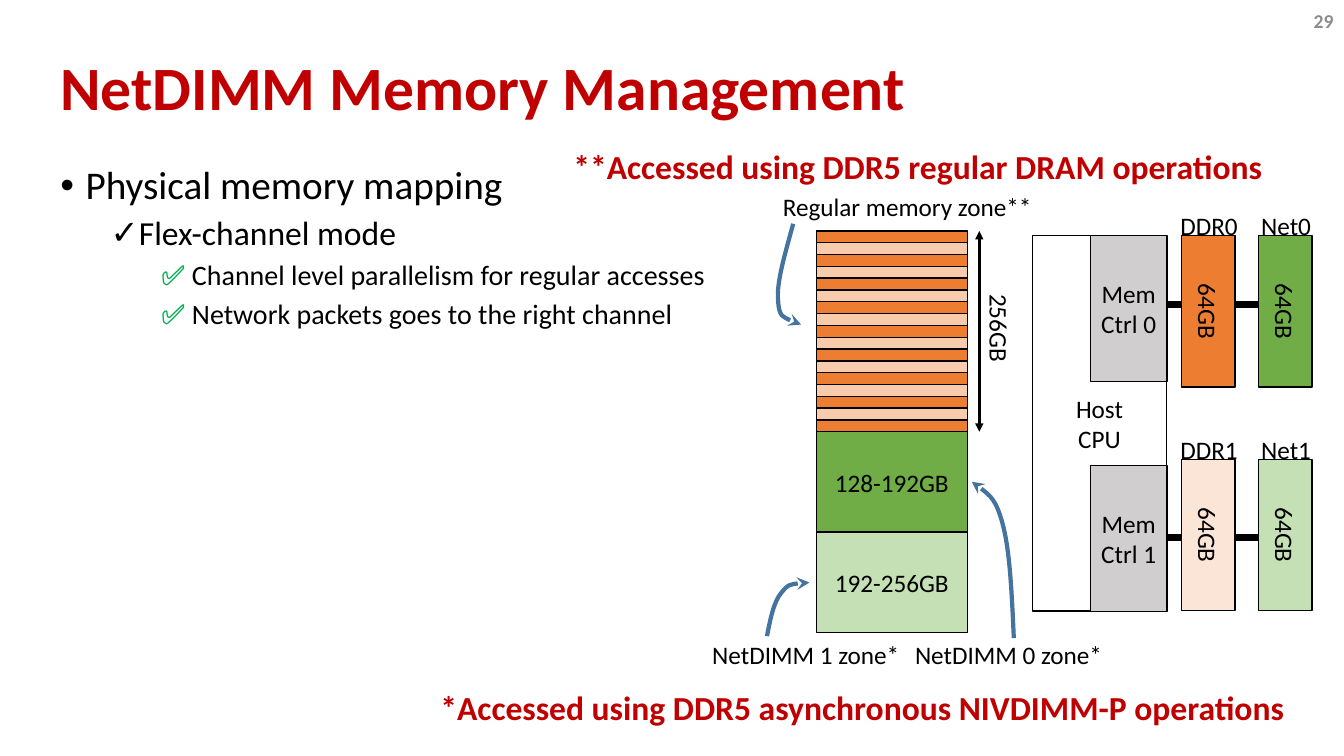
from lxml import etree
from pptx import Presentation
from pptx.dml.color import RGBColor
from pptx.enum.shapes import MSO_CONNECTOR, MSO_SHAPE
from pptx.enum.text import MSO_ANCHOR, MSO_AUTO_SIZE, PP_ALIGN
from pptx.oxml.ns import qn
from pptx.util import Cm, Pt

RECT = MSO_SHAPE.RECTANGLE
STRAIGHT = MSO_CONNECTOR.STRAIGHT
MIDDLE = MSO_ANCHOR.MIDDLE
FIT = MSO_AUTO_SIZE.SHAPE_TO_FIT_TEXT
LEFT, CENTER, RIGHT = PP_ALIGN.LEFT, PP_ALIGN.CENTER, PP_ALIGN.RIGHT
FONT = "Calibri"
BLACK = RGBColor(0, 0, 0)
WHITE = RGBColor(255, 255, 255)
RED = RGBColor(0xC0, 0, 0)
GRAY = RGBColor(0x8C, 0x8C, 0x8C)
SILVER = RGBColor(0xD0, 0xCE, 0xCE)
ORANGE = RGBColor(0xED, 0x7D, 0x31)
PEACH = RGBColor(0xF8, 0xCB, 0xAD)
CREAM = RGBColor(0xFB, 0xE5, 0xD6)
GREEN = RGBColor(0x70, 0xAD, 0x47)
MINT = RGBColor(0xC5, 0xE0, 0xB4)
CHECK = RGBColor(0, 0xB0, 0x50)
BLUE = RGBColor(0x43, 0x73, 0x9E)


def style(para, size, color=BLACK, bold=False, align=LEFT):
    """Set the font and alignment of a paragraph."""
    para.alignment = align
    font = para.font
    font.name, font.size, font.bold = FONT, Pt(size), bold
    font.color.rgb = color


def add_label(slide, box, text, size=18, color=BLACK, bold=False, align=LEFT, turn=0):
    """Add one line of text that does not wrap."""
    label = slide.shapes.add_textbox(*map(Cm, box))
    label.rotation = turn
    frame = label.text_frame
    frame.word_wrap = False
    frame.auto_size = FIT
    frame.text = text
    style(frame.paragraphs[0], size, color, bold, align)


def add_block(slide, box, color, text="", upright=False):
    """Add a filled, outlined box, with its text turned if upright."""
    x, y, w, h = box
    if upright:
        x, y, w, h = x + (w - h) / 2, y + (h - w) / 2, h, w
    block = slide.shapes.add_shape(RECT, Cm(x), Cm(y), Cm(w), Cm(h))
    block.rotation = 90 if upright else 0
    block.shadow.inherit = False
    block.fill.solid()
    block.fill.fore_color.rgb = color
    block.line.color.rgb = BLACK
    block.line.width = Pt(1)
    if text:
        frame = block.text_frame
        frame.word_wrap = True
        frame.vertical_anchor = MIDDLE
        frame.text = text
        for para in frame.paragraphs:
            style(para, 18, align=CENTER)


def add_tips(shape, kind, *ends):
    """Put arrowheads on the named ends of a line."""
    stroke = shape.element.spPr.find(qn("a:ln"))
    for end in ends:
        etree.SubElement(stroke, qn(f"a:{end}"), type=kind)


def add_line(slide, start, end, width):
    """Add a straight black line."""
    line = slide.shapes.add_connector(STRAIGHT, *map(Cm, start + end))
    line.line.color.rgb = BLACK
    line.line.width = Pt(width)
    etree.SubElement(line.element.spPr, qn("a:effectLst"))
    return line


def add_curve(slide, x, y, points):
    """Add a Bezier arrow that points at its first point."""
    spots = [(Cm(x + dx), Cm(y + dy)) for dx, dy in points]
    form = slide.shapes.build_freeform(*spots[0])
    form.add_line_segments(spots[1:], close=False)
    curve = form.convert_to_shape()
    curve.shadow.inherit = False
    curve.fill.background()
    curve.line.color.rgb = BLUE
    curve.line.width = Pt(3)
    route = next(curve.element.iter(qn("a:path")))
    legs = list(route)[1:]
    for first in range(0, len(legs), 3):
        bend = etree.SubElement(route, qn("a:cubicBezTo"))
        for leg in legs[first:first + 3]:
            bend.append(leg[0])
            route.remove(leg)
    add_tips(curve, "stealth", "headEnd")


def add_title(slide, box):
    """Place and format the title."""
    title = slide.shapes.title
    title.left, title.top, title.width, title.height = map(Cm, box)
    frame = title.text_frame
    frame.vertical_anchor = MIDDLE
    frame.text = "NetDIMM Memory Management"
    style(frame.paragraphs[0], 44, RED, True)
    frame.paragraphs[0].line_spacing = 0.9


def add_body(slide, box):
    """Write the bullet list."""
    frame = slide.shapes.add_textbox(*map(Cm, box)).text_frame
    frame.word_wrap = True
    items = [
        ("Physical memory mapping", 0, 28, 10, "•", 0.64),
        ("Flex-channel mode", 1, 24, 6, "✓", 1.91),
        ("Channel level parallelism for regular accesses", 2, 20, 6, "", 2.54),
        ("Network packets goes to the right channel", 2, 20, 6, "", 2.54),
    ]
    for row, (text, level, size, gap, mark, left) in enumerate(items):
        para = frame.add_paragraph() if row else frame.paragraphs[0]
        style(para, size)
        para.level = level
        para.line_spacing = 0.9
        para.space_before = Pt(gap)
        props = para._p.get_or_add_pPr()
        props.set("marL", str(Cm(left)))
        props.set("indent", str(Cm(-0.64) if mark else 0))
        if mark:
            face = etree.Element(qn("a:buFont"), typeface="Arial")
            sign = etree.Element(qn("a:buChar"), char=mark)
            props.find(qn("a:spcBef")).addnext(face)
            face.addnext(sign)
        else:
            tick = para.add_run()
            tick.text = "✅ "
            tick.font.color.rgb = CHECK
        para.add_run().text = text


def add_stack(slide, box):
    """Draw the address map with its zones, ruler and arrows."""
    x, y, w, h = box
    half, count = h / 2, 17
    zones = [("128-192GB", GREEN), ("192-256GB", MINT)]
    for row, (text, color) in enumerate(zones):
        add_block(slide, (x, y + half + row * half / 2, w, half / 2), color, text)
    step = half / count
    for row in range(count):
        color = PEACH if row % 2 else ORANGE
        add_block(slide, (x, y + row * step, w, step), color)
    ruler = add_line(slide, (x + 4.11, y), (x + 4.11, y + half), 1.75)
    add_tips(ruler, "triangle", "headEnd", "tailEnd")
    add_label(slide, (x + 3.5, y + 1.95, 2.24, 1.02), "256GB", turn=90)
    add_label(slide, (x - 1.09, y - 1.12, 6.86, 1.02), "Regular memory zone**")
    add_label(slide, (x + 2.24, y + 10.16, 5.28, 1.02), "NetDIMM 0 zone*")
    add_label(slide, (x - 2.87, y + 10.16, 5.28, 1.02), "NetDIMM 1 zone*")
    curves = [
        [(-0.38, 2.36), (-0.66, 2.26), (-0.94, 2.18), (-0.96, 1.75),
         (-1.01, 1.32), (-0.78, 0.56), (-0.58, -0.18)],
        [(3.92, 6.32), (4.22, 6.52), (4.53, 6.75), (4.7, 7.39),
         (4.88, 8.05), (4.93, 9.14), (4.98, 10.26)],
        [(-0.17, 8.86), (-0.43, 8.86), (-0.71, 8.89), (-0.88, 9.12),
         (-1.06, 9.32), (-1.16, 9.78), (-1.24, 10.21)],
    ]
    for points in curves:
        add_curve(slide, x, y, points)


def add_host(slide, box):
    """Draw the host with its two memory channels."""
    x, y, w, h = box
    add_block(slide, (x, y, 3.38, h), WHITE, "Host\nCPU")
    rows = [(0, 0, 1.74, ORANGE, GREEN), (5.64, 5.79, 1.97, CREAM, MINT)]
    for row, (top, drop, wire, left, right) in enumerate(rows):
        level = y + top + wire
        add_line(slide, (x + 3.38, level), (x + 6.4, level), 5)
        add_block(slide, (x + 1.46, y + drop, 1.93, 3.68), SILVER, f"Mem Ctrl {row}")
        for name, dx, color in (("DDR", 3.75, left), ("Net", w - 1.35, right)):
            add_block(slide, (x + dx, y + top, 1.35, 3.81), color, "64GB", True)
            add_label(slide, (x + dx - 0.29, y + top - 0.77, 1.98, 1.02),
                      f"{name}{row}", align=CENTER)


def main():
    """Build the slide and save it."""
    deck = Presentation()
    deck.slide_width, deck.slide_height = Cm(33.87), Cm(19.05)
    slide = deck.slides.add_slide(deck.slide_layouts[5])
    add_title(slide, (1.27, 1.02, 31.75, 2.54))
    add_body(slide, (1.27, 4.06, 31.75, 13.97))
    add_label(slide, (26.24, 0.1, 7.62, 0.86), "29", 14, GRAY, True, RIGHT)
    add_host(slide, (26.02, 5.94, 7.04, 9.46))
    add_stack(slide, (20.57, 5.82, 3.81, 10.12))
    add_label(slide, (10.85, 17.18, 22, 1.27),
              "*Accessed using DDR5 asynchronous NIVDIMM-P operations", 24, RED, True)
    add_label(slide, (14.2, 3.54, 18.06, 1.27),
              "**Accessed using DDR5 regular DRAM operations", 24, RED, True)
    deck.save("out.pptx")


if __name__ == "__main__":
    main()
